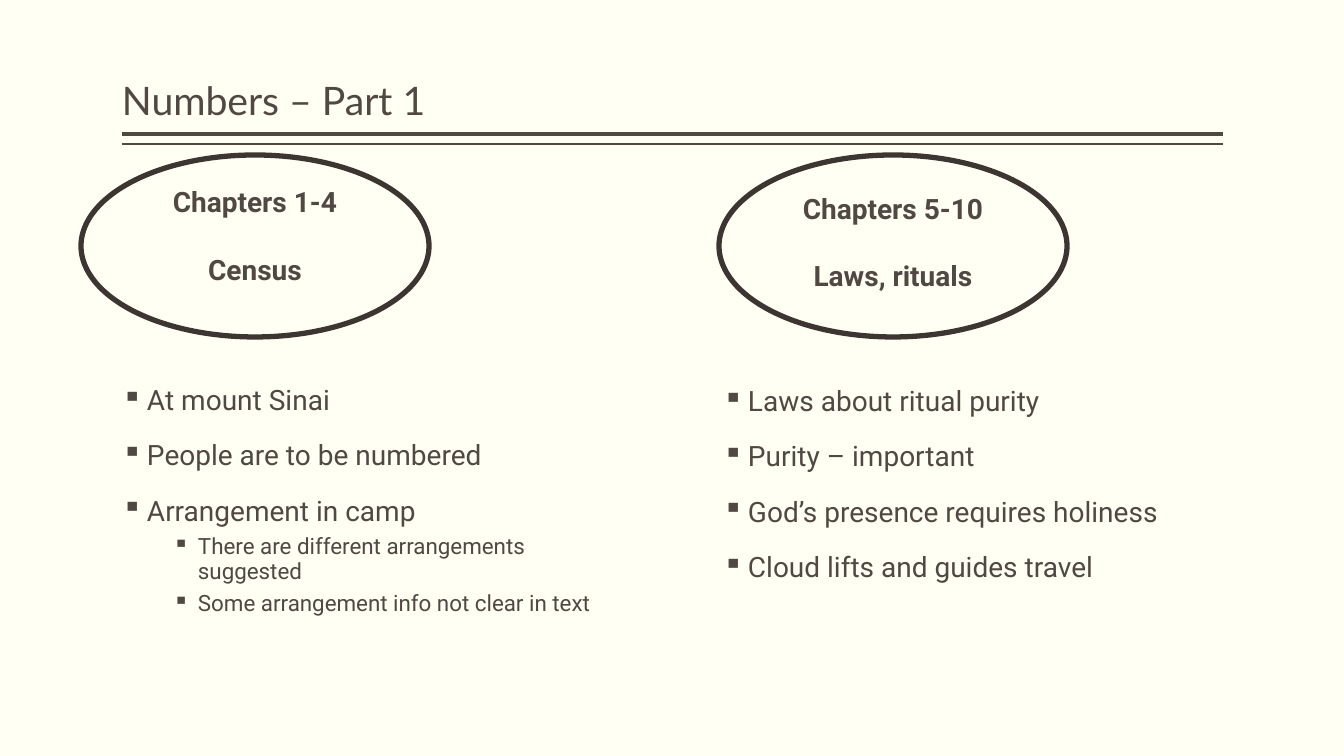
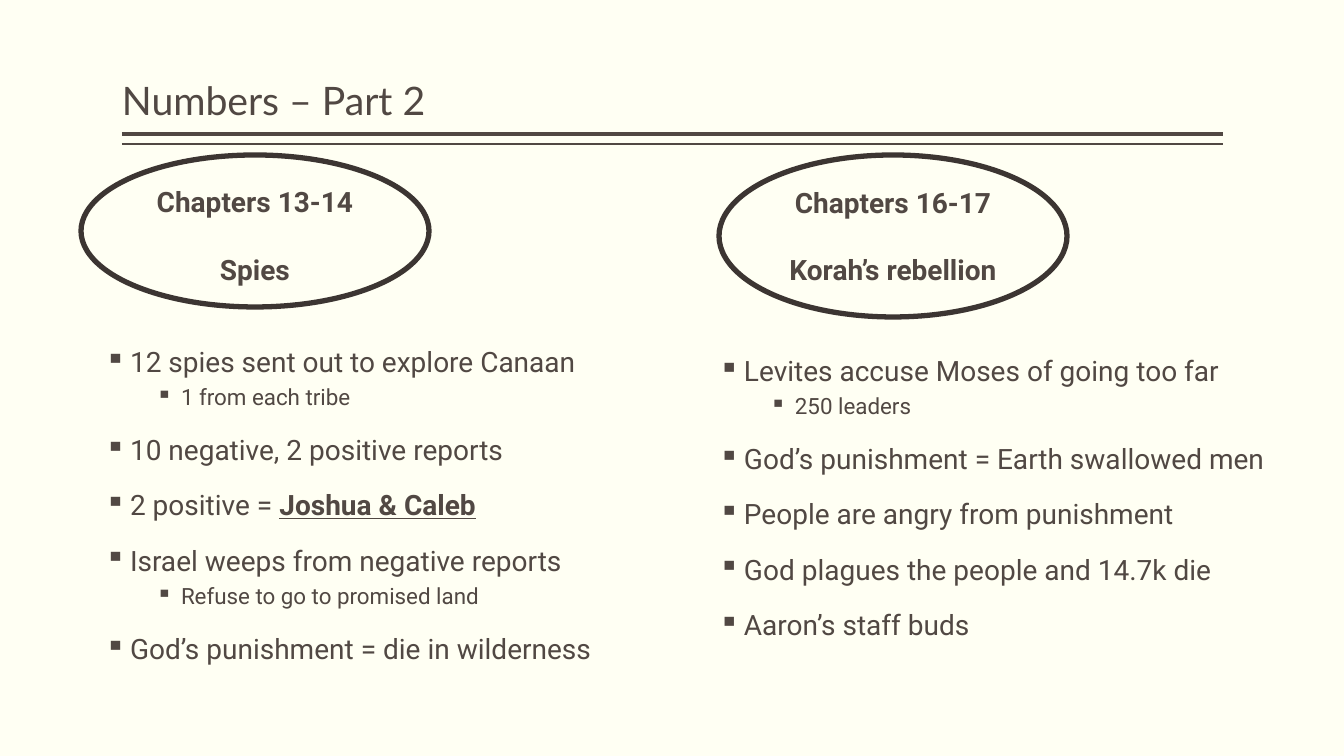
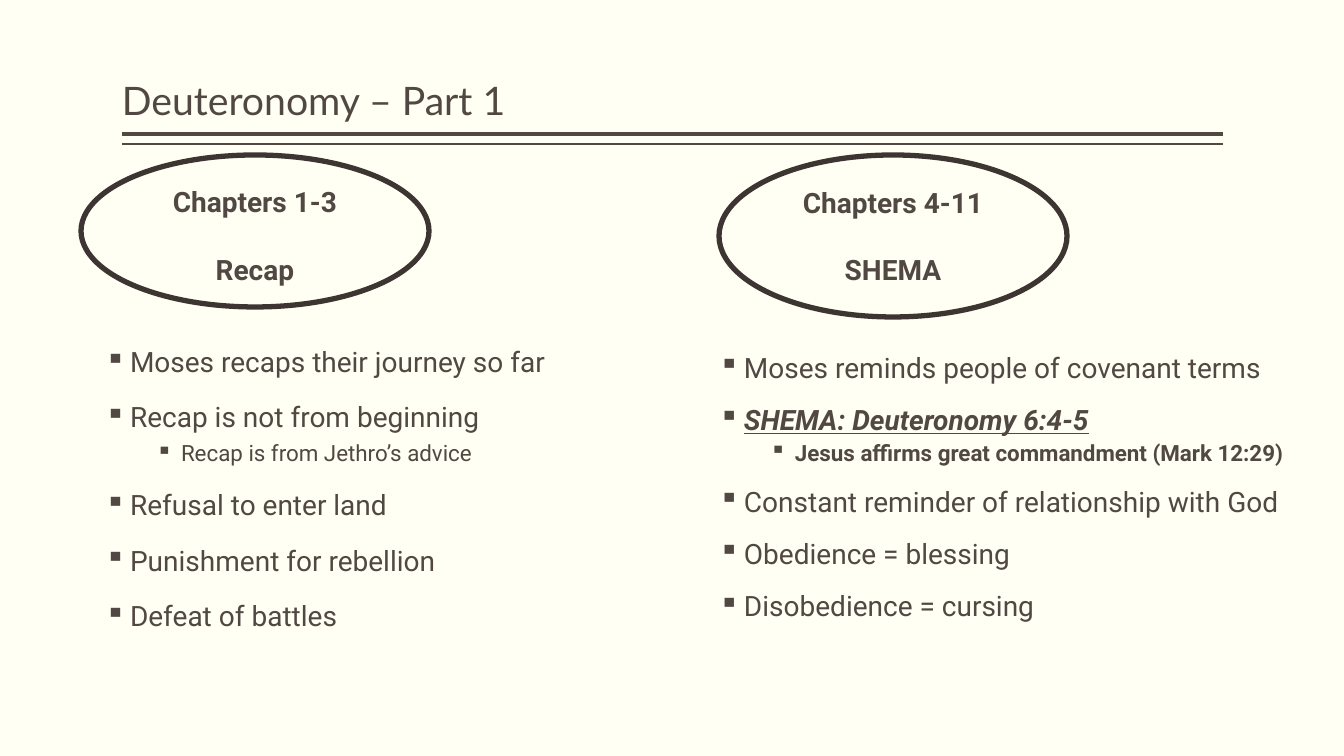
from dataclasses import dataclass

from lxml import etree
from pptx import Presentation
from pptx import util as u
from pptx.dml.color import RGBColor
from pptx.enum import shapes, text
from pptx.oxml.ns import qn

# Shared look
CREAM = RGBColor(0xFF, 0xFF, 0xF3)
BROWN = RGBColor(0x51, 0x48, 0x43)
DARK_BROWN = RGBColor(0x3C, 0x35, 0x32)
TITLE_FONT, BODY_FONT = "Lato", "Roboto"
EMU_PER_PX = 914400 / 100.8
RULE_LEFT, RULE_RIGHT = 122, 1223
OVAL_TOP, OVAL_WIDTH = 155, 348
OVAL_LEFTS = (81, 719)
LABEL_SIZES = ((285, 157), (258, 121))
# Per level: text size, left indent in px, space before
LEVELS = ((20, 25, 18), (16, 76, 6))
HANGING = 25


@dataclass
class Column:
    chapters: str
    theme: str
    oval_height: int
    body: tuple             # left, top, width, height
    items: list             # (level, (words, style), ...), style letters b, i, u
    label_top: int = 180
    spacing: float = 0.9


def px(length):
    return u.Emu(round(length * EMU_PER_PX))


def add_text_box(page, left, top, width, height, anchor=text.MSO_ANCHOR.TOP):
    box = page.shapes.add_textbox(px(left), px(top), px(width), px(height))
    frame = box.text_frame
    frame.word_wrap = True
    frame.vertical_anchor = anchor
    frame.margin_left = frame.margin_right = 0
    frame.margin_top = frame.margin_bottom = px(5)
    return frame


def next_para(frame, index):
    return frame.add_paragraph() if index else frame.paragraphs[0]


def add_span(para, words, size, font=BODY_FONT, style=""):
    span = para.add_run()
    span.text = words
    span.font.name = font
    span.font.size = u.Pt(size)
    span.font.color.rgb = BROWN
    span.font.bold = "b" in style
    span.font.italic = "i" in style
    span.font.underline = "u" in style


def add_bullet(para, indent):
    props = para._p.get_or_add_pPr()
    props.set("marL", str(px(indent)))
    props.set("indent", str(-px(HANGING)))
    etree.SubElement(props, qn("a:buChar")).set("char", "▪")


def add_rule(page, y, weight):
    rule = page.shapes.add_connector(
        shapes.MSO_CONNECTOR.STRAIGHT, px(RULE_LEFT), px(y), px(RULE_RIGHT), px(y))
    rule.line.color.rgb = BROWN
    rule.line.width = u.Pt(weight)
    etree.SubElement(rule._element.spPr, qn("a:effectLst"))


def add_title(page, words):
    frame = add_text_box(page, RULE_LEFT, 8, RULE_RIGHT - RULE_LEFT, 121,
                         text.MSO_ANCHOR.BOTTOM)
    para = frame.paragraphs[0]
    para.line_spacing = 0.9
    add_span(para, words, 28, TITLE_FONT)


def add_oval(page, left, height):
    oval = page.shapes.add_shape(shapes.MSO_SHAPE.OVAL, px(left), px(OVAL_TOP),
                                 px(OVAL_WIDTH), px(height))
    oval.shadow.inherit = False
    oval.fill.background()
    oval.line.color.rgb = DARK_BROWN
    oval.line.width = u.Pt(3.78)


def add_label(page, column, center, size):
    width, height = size
    frame = add_text_box(page, center - width / 2, column.label_top, width, height)
    for index, words in enumerate((column.chapters, column.theme)):
        para = next_para(frame, index)
        para.alignment = text.PP_ALIGN.CENTER
        if index:
            para.space_before = u.Pt(24)
        add_span(para, words, 20, style="b")


def add_bullets(page, column):
    frame = add_text_box(page, *column.body)
    for index, (level, *spans) in enumerate(column.items):
        size, indent, before = LEVELS[level]
        para = next_para(frame, index)
        para.level = level
        add_bullet(para, indent)
        para.line_spacing = column.spacing
        if index:
            para.space_before = u.Pt(before)
        for words, style in spans:
            add_span(para, words, size, style=style)


def add_page(deck, title, columns):
    page = deck.slides.add_slide(deck.slide_layouts[6])
    add_rule(page, 134, 3)
    add_rule(page, 144, 1)
    add_title(page, title)
    for column, left, size in zip(columns, OVAL_LEFTS, LABEL_SIZES):
        add_oval(page, left, column.oval_height)
        add_label(page, column, left + OVAL_WIDTH / 2, size)
        add_bullets(page, column)


# Content
LEFT_BODY = (105, 343, 530, 389)
RIGHT_BODY = (719, 352, 567, 312)

PAGES = [
    ("Numbers – Part 1", (
        Column("Chapters 1-4", "Census", 182, (122, 381, 500, 285), [
            (0, ("At mount Sinai", "")),
            (0, ("People are to be numbered", "")),
            (0, ("Arrangement in camp", "")),
            (1, ("There are different arrangements suggested", "")),
            (1, ("Some arrangement info not clear in text", "")),
        ]),
        Column("Chapters 5-10", "Laws, rituals", 182, (723, 382, 500, 285), [
            (0, ("Laws about ritual purity", "")),
            (0, ("Purity – important", "")),
            (0, ("God’s presence requires holiness", "")),
            (0, ("Cloud lifts and guides travel", "")),
        ], label_top=186),
    )),
    ("Numbers – Part 2", (
        Column("Chapters 13-14", "Spies", 152, LEFT_BODY, [
            (0, ("12 spies sent out to explore Canaan", "")),
            (1, ("1 from each tribe", "")),
            (0, ("10 negative, 2 positive reports", "")),
            (0, ("2 positive = ", ""), ("Joshua & Caleb", "bu")),
            (0, ("Israel weeps from negative reports", "")),
            (1, ("Refuse to go to promised land", "")),
            (0, ("God’s punishment = die in wilderness", "")),
        ]),
        Column("Chapters 16-17", "Korah’s rebellion", 162, RIGHT_BODY, [
            (0, ("Levites accuse Moses of going too far", "")),
            (1, ("250 leaders", "")),
            (0, ("God’s punishment = Earth swallowed men", "")),
            (0, ("People are angry from punishment", "")),
            (0, ("God plagues the people and 14.7k die", "")),
            (0, ("Aaron’s staff buds", "")),
        ]),
    )),
    ("Deuteronomy – Part 1", (
        Column("Chapters 1-3", "Recap", 152, LEFT_BODY, [
            (0, ("Moses recaps their journey so far", "")),
            (0, ("Recap is not from beginning", "")),
            (1, ("Recap is from Jethro’s advice", "")),
            (0, ("Refusal to enter land", "")),
            (0, ("Punishment for rebellion", "")),
            (0, ("Defeat of battles", "")),
        ]),
        Column("Chapters 4-11", "SHEMA", 162, RIGHT_BODY, [
            (0, ("Moses reminds people of covenant terms", "")),
            (0, ("SHEMA: Deuteronomy 6:4-5", "biu")),
            (1, ("Jesus affirms great commandment (Mark 12:29)", "b")),
            (0, ("Constant reminder of relationship with God", "")),
            (0, ("Obedience = blessing", "")),
            (0, ("Disobedience = cursing", "")),
        ], spacing=0.8),
    )),
]


def main():
    deck = Presentation()
    deck.slide_width, deck.slide_height = px(1344), px(756)
    background = deck.slide_master.background.fill
    background.solid()
    background.fore_color.rgb = CREAM
    for title, columns in PAGES:
        add_page(deck, title, columns)
    deck.save("out.pptx")


if __name__ == "__main__":
    main()
